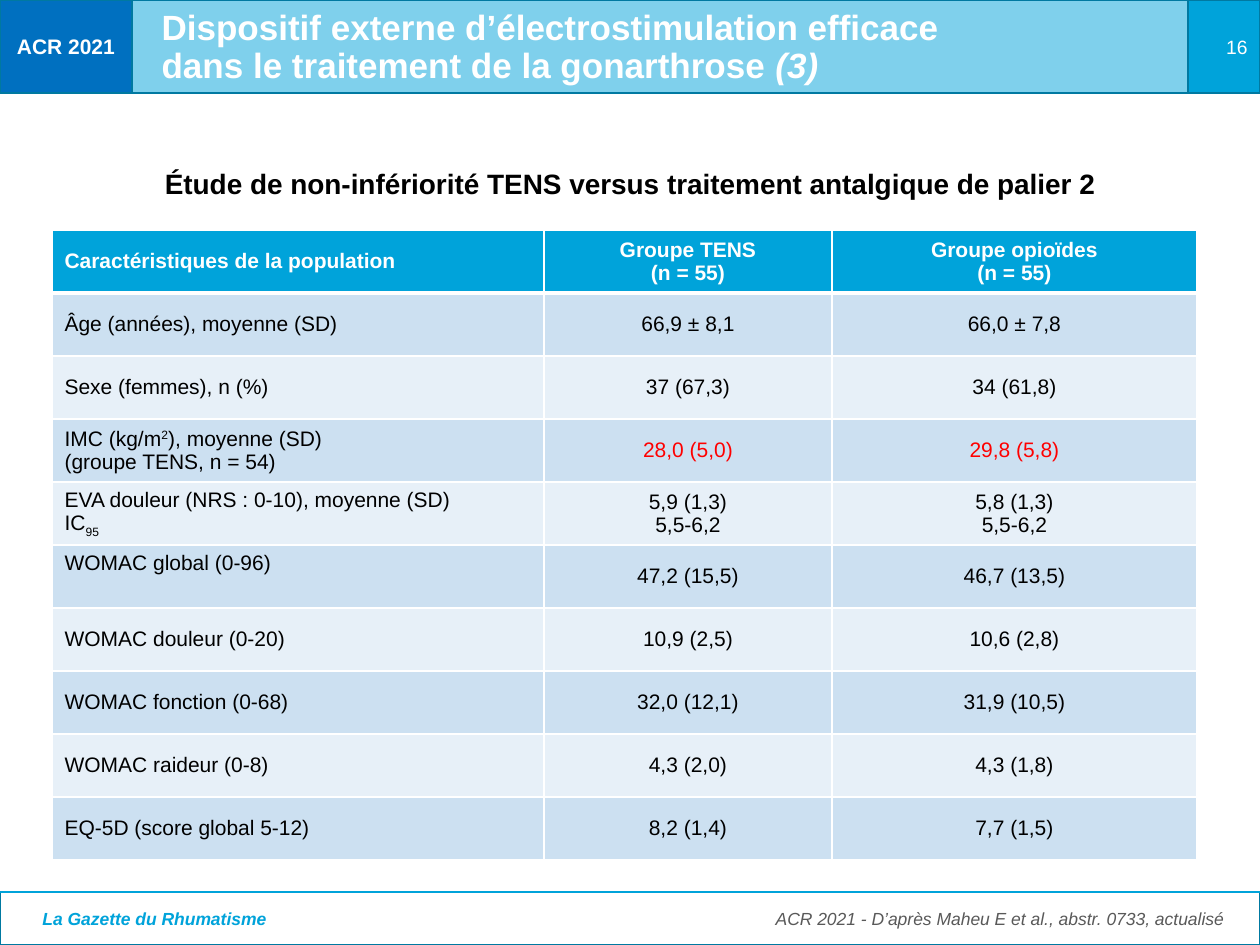
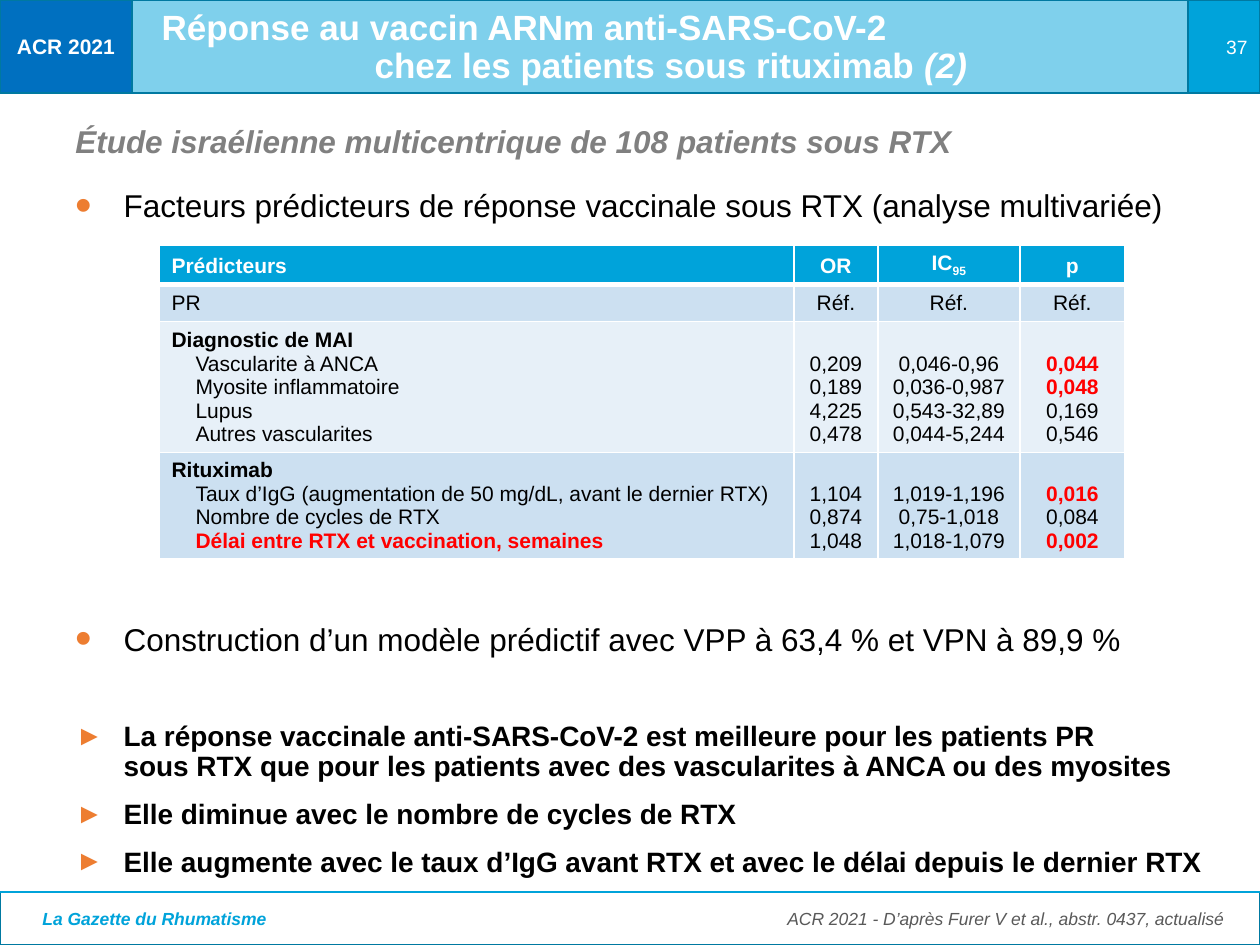
from lxml.etree import SubElement
from pptx import Presentation
from pptx.dml.color import RGBColor
from pptx.enum.shapes import MSO_CONNECTOR as Connector, MSO_SHAPE as Shape
from pptx.enum.text import MSO_ANCHOR as Anchor, MSO_AUTO_SIZE as AutoSize, PP_ALIGN as Align
from pptx.oxml.ns import qn
from pptx.util import Pt

EMU_PER_PX = 914400 / 126
FONT = "Arial"
WHITE = RGBColor(255, 255, 255)
BLACK = RGBColor(0, 0, 0)
RED = RGBColor(255, 0, 0)
CYAN = RGBColor(0x00, 0xA3, 0xDA)
BLUE = RGBColor(0x00, 0x70, 0xC0)
EDGE = RGBColor(0x00, 0x79, 0xA1)
GRAY = RGBColor(0x80, 0x80, 0x80)
DARK_GRAY = RGBColor(0x59, 0x59, 0x59)
ORANGE = RGBColor(0xED, 0x7D, 0x31)
STRIPES = [RGBColor(0xE7, 0xF0, 0xF8), RGBColor(0xCC, 0xE0, 0xF1)]
TITLE_ONLY, TWO_CONTENT = 5, 3

MARKS = {
    "*": {"bold": True},
    "/": {"italic": True},
    "~": {"color": RED},
    "!": {"color": RED, "bold": True},
    "^": {"baseline": 30000},
    "_": {"baseline": -25000},
}


def px(length):
    return round(length * EMU_PER_PX)


def plain(part):
    return part[1:] if part[0] in MARKS else part


def style_span(span, size, color=BLACK, bold=False, italic=False, baseline=0):
    font = span.font
    font.name, font.size, font.bold, font.italic = FONT, Pt(size), bold, italic
    font.color.rgb = color
    if baseline:
        span._r.get_or_add_rPr().set("baseline", str(baseline))


class SlideBuilder:
    def __init__(self, deck):
        self.deck = deck
        self.page = None

    def start(self, layout, number, title, source, indent=0):
        self.page = self.deck.slides.add_slide(self.deck.slide_layouts[layout])
        self.rect(0, 892, 1260, 53, WHITE)
        self.rect(132, 0, 1056, 93, CYAN, opacity=50)
        self.rect(0, 0, 132, 93, BLUE, "ACR 2021", 12, Align.CENTER, bold=True)
        self.rect(1188, 0, 72, 93, CYAN, str(number), 11, Align.RIGHT)
        self.rule(0, 892, 1260, 892)
        self.label(30, 902, 437, 34, "La Gazette du Rhumatisme", 10, color=CYAN, bold=True, italic=True)
        self.label(727, 902, 509, 34, source, 10, Align.RIGHT, color=DARK_GRAY, italic=True)
        self.title(title, indent)

    def set_text(self, frame, text, size, align=Align.LEFT, **style):
        frame.text = text
        for para, line in zip(frame.paragraphs, text.split("\n")):
            if line.startswith(">"):
                line = line[1:]
                self.indent(para, 24)
            first, *others = line.split("|")
            para.alignment = align
            para.text = plain(first)
            for span in para.runs:
                style_span(span, size, **{**style, **MARKS.get(first[0], {})})
            for part in others:
                span = para.add_run()
                span.text = plain(part)
                style_span(span, size, **{**style, **MARKS.get(part[0], {})})

    def indent(self, para, left, hanging=0):
        props = para._p.get_or_add_pPr()
        props.set("marL", str(px(left)))
        props.set("indent", str(-px(hanging)))
        return props

    def place(self, shape, left, top, width, height):
        shape.left, shape.top, shape.width, shape.height = map(px, (left, top, width, height))
        shape.text_frame.word_wrap = True
        shape.text_frame.auto_size = AutoSize.NONE

    def rect(self, left, top, width, height, fill, text="", size=12, align=Align.LEFT, opacity=100, bold=False):
        shape = self.page.shapes.add_shape(Shape.RECTANGLE, *map(px, (left, top, width, height)))
        shape.shadow.inherit = False
        shape.fill.solid()
        shape.fill.fore_color.rgb = fill
        shape.line.color.rgb = EDGE
        shape.line.width = 0
        if opacity < 100:
            color = shape.element.spPr.find(qn("a:solidFill")).find(qn("a:srgbClr"))
            SubElement(color, qn("a:alpha"), val=str(opacity * 1000))
        if text:
            shape.text_frame.vertical_anchor = Anchor.MIDDLE
            self.set_text(shape.text_frame, text, size, align, color=WHITE, bold=bold)

    def rule(self, x1, y1, x2, y2):
        line = self.page.shapes.add_connector(Connector.STRAIGHT, *map(px, (x1, y1, x2, y2)))
        line.line.color.rgb = CYAN
        line.line.width = Pt(0.75)
        SubElement(line.element.spPr, qn("a:effectLst"))

    def label(self, left, top, width, height, text, size, align=Align.LEFT, **style):
        box = self.page.shapes.add_textbox(0, 0, 0, 0)
        self.place(box, left, top, width, height)
        self.set_text(box.text_frame, text, size, align, **style)

    def title(self, text, indent):
        box = self.page.shapes.title
        self.page.shapes.element.append(box.element)
        self.place(box, 149, 5, 1009, 86)
        frame = box.text_frame
        frame.vertical_anchor = Anchor.MIDDLE
        self.set_text(frame, text, 20, color=WHITE, bold=True)
        for para in frame.paragraphs:
            para.line_spacing = 0.9
            para.space_before = 0
        self.indent(frame.paragraphs[1], indent)

    def bullets(self, index, left, top, width, height, text, size, mark, gaps, mark_size=100, spacing=1.0, bold=False):
        box = self.page.placeholders[index]
        self.place(box, left, top, width, height)
        box.text_frame.vertical_anchor = Anchor.TOP
        self.set_text(box.text_frame, text, size, bold=bold)
        for para, gap in zip(box.text_frame.paragraphs, gaps):
            para.line_spacing = spacing
            para.space_before = Pt(gap)
            props = self.indent(para, 48, 48)
            SubElement(SubElement(props, qn("a:buClr")), qn("a:srgbClr"), val=str(ORANGE))
            SubElement(props, qn("a:buSzPct"), val=str(mark_size * 1000))
            SubElement(props, qn("a:buFont"), typeface=FONT)
            SubElement(props, qn("a:buChar"), char=mark)

    def borders(self, cell, top, bottom):
        props = cell._tc.get_or_add_tcPr()
        for side, width in (("L", 1), ("R", 1), ("T", top), ("B", bottom)):
            line = SubElement(props, qn(f"a:ln{side}"), w=str(Pt(width)))
            SubElement(SubElement(line, qn("a:solidFill")), qn("a:srgbClr"), val=str(WHITE))

    def table(self, left, top, widths, heights, rows, anchor):
        area = map(px, (left, top, sum(widths), sum(heights)))
        table = self.page.shapes.add_table(len(rows), len(widths), *area).table
        for column, width in zip(table.columns, widths):
            column.width = px(width)
        for r, (height, values) in enumerate(zip(heights, rows)):
            table.rows[r].height = px(height)
            for c, value in enumerate(values):
                cell = table.cell(r, c)
                self.borders(cell, 3 if r == 1 else 1, 3 if r == 0 else 1)
                cell.fill.solid()
                cell.fill.fore_color.rgb = STRIPES[r % 2] if r else CYAN
                cell.vertical_anchor = anchor
                self.set_text(cell.text_frame, value, 12, Align.CENTER if c else Align.LEFT,
                              color=BLACK if r else WHITE, bold=r == 0)
        return table


POPULATION = [
    ("Caractéristiques de la population", "Groupe TENS\n(n = 55)", "Groupe opioïdes\n(n = 55)"),
    ("Âge (années), moyenne (SD)", "66,9 ± 8,1", "66,0 ± 7,8"),
    ("Sexe (femmes), n (%)", "37 (67,3)", "34 (61,8)"),
    ("IMC (kg/m|^2|), moyenne (SD)\n(groupe TENS, n = 54)", "~28,0 (5,0)", "~29,8 (5,8)"),
    ("EVA douleur (NRS : 0-10), moyenne (SD)\nIC|_95", "5,9 (1,3)\n5,5-6,2", "5,8 (1,3)\n5,5-6,2"),
    ("WOMAC global (0-96)", "47,2 (15,5)", "46,7 (13,5)"),
    ("WOMAC douleur (0-20)", "10,9 (2,5)", "10,6 (2,8)"),
    ("WOMAC fonction (0-68)", "32,0 (12,1)", "31,9 (10,5)"),
    ("WOMAC raideur (0-8)", "4,3 (2,0)", "4,3 (1,8)"),
    ("EQ-5D (score global 5-12)", "8,2 (1,4)", "7,7 (1,5)"),
]

PREDICTORS = [
    ("Prédicteurs", "OR", "IC|_95", "p"),
    ("PR", "Réf.", "Réf.", "Réf."),
    ("*Diagnostic de MAI\n>Vascularite à ANCA\n>Myosite inflammatoire\n>Lupus\n>Autres vascularites",
     "0,209\n0,189\n4,225\n0,478",
     "0,046-0,96\n0,036-0,987\n0,543-32,89\n0,044-5,244",
     "!0,044\n!0,048\n0,169\n0,546"),
    ("*Rituximab\n>Taux d’IgG (augmentation de 50 mg/dL, avant le dernier RTX)\n"
     ">Nombre de cycles de RTX\n>!Délai entre RTX et vaccination, semaines",
     "1,104\n0,874\n1,048",
     "1,019-1,196\n0,75-1,018\n1,018-1,079",
     "!0,016\n0,084\n!0,002"),
]


def build_tens_slide(builder):
    builder.start(TITLE_ONLY, 16,
                  "Dispositif externe d’électrostimulation efficace\ndans le traitement de la gonarthrose |/(3)",
                  "ACR 2021 - D’après Maheu E et al., abstr. 0733, actualisé")
    builder.label(146, 160, 969, 60, "Étude de non-infériorité TENS versus traitement antalgique de palier 2",
                  16, Align.CENTER, bold=True)
    table = builder.table(52, 230, [492, 288, 365], [63] * len(POPULATION), POPULATION, Anchor.MIDDLE)
    table.cell(5, 0).vertical_anchor = Anchor.TOP


def build_vaccine_slide(builder):
    builder.start(TWO_CONTENT, 37,
                  "Réponse au vaccin ARNm anti-SARS-CoV-2\nchez les patients sous rituximab |/(2)",
                  "ACR 2021 - D’après Furer V et al., abstr. 0437, actualisé", indent=213)
    builder.label(63, 116, 1110, 64, "Étude israélienne multicentrique de 108 patients sous RTX",
                  18, color=GRAY, bold=True, italic=True)
    builder.bullets(1, 63, 180, 1119, 542,
                    "Facteurs prédicteurs de réponse vaccinale sous RTX (analyse multivariée)\n"
                    "Construction d’un modèle prédictif avec VPP à 63,4 % et VPN à 89,9 %",
                    18, "•", [3, 226], mark_size=150)
    builder.table(159, 245, [635, 84, 142, 105], [37, 37, 131, 106], PREDICTORS, Anchor.BOTTOM)
    builder.bullets(2, 63, 716, 1173, 175,
                    "La réponse vaccinale anti-SARS-CoV-2 est meilleure pour les patients PR\v"
                    "sous RTX que pour les patients avec des vascularites à ANCA ou des myosites\n"
                    "Elle diminue avec le nombre de cycles de RTX\n"
                    "Elle augmente avec le taux d’IgG avant RTX et avec le délai depuis le dernier RTX",
                    16, "►", [10] * 3, spacing=0.9, bold=True)


def main():
    deck = Presentation()
    deck.slide_width, deck.slide_height = px(1260), px(945)
    builder = SlideBuilder(deck)
    build_tens_slide(builder)
    build_vaccine_slide(builder)
    deck.save("out.pptx")


if __name__ == "__main__":
    main()
